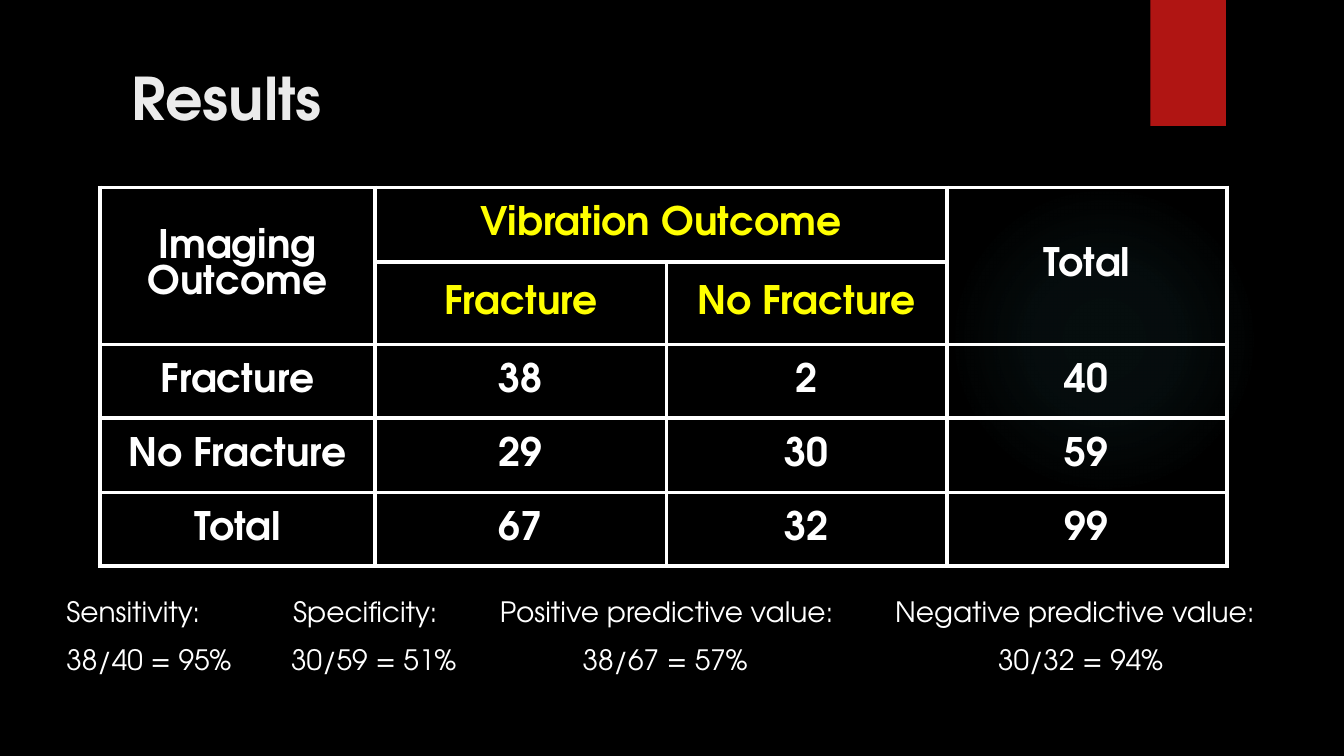
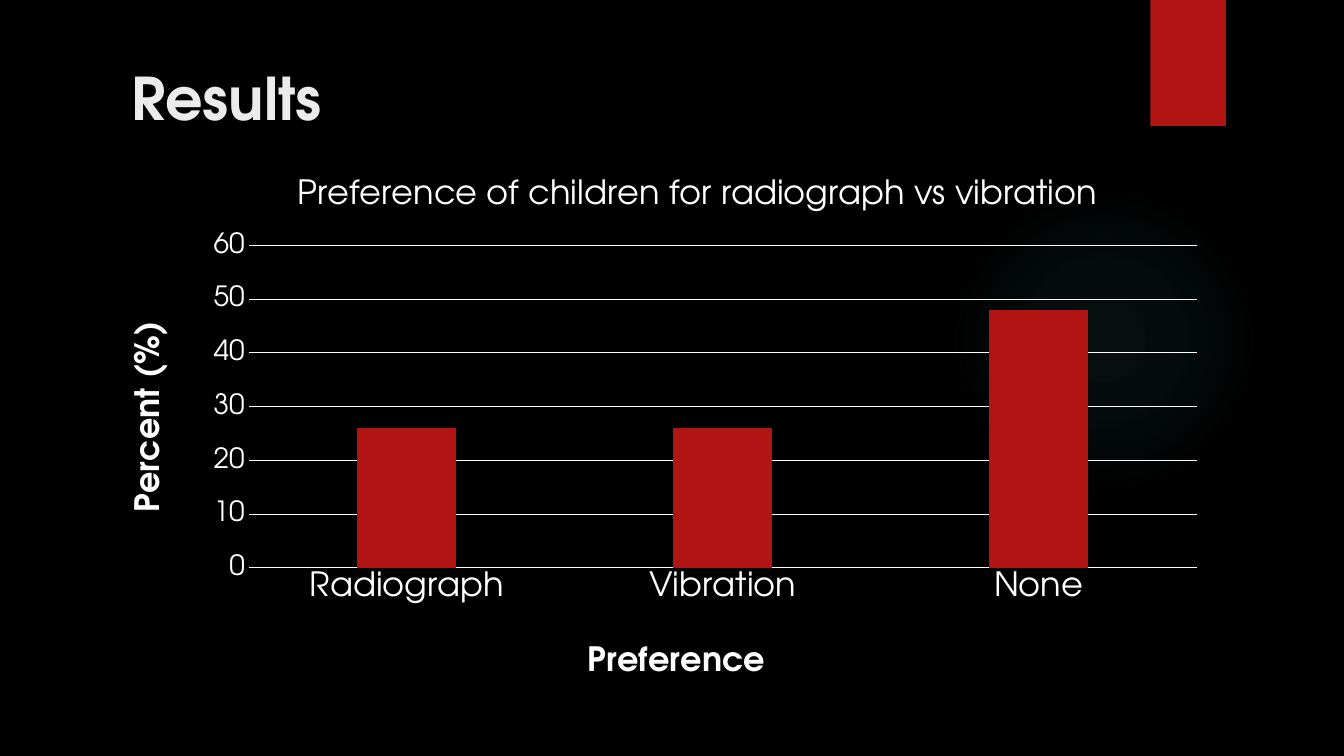
import pptx
import pptx.util
import pptx.dml.color
import pptx.chart.data
import pptx.enum.chart
import pptx.enum.shapes
import pptx.enum.text
import pptx.oxml
import pptx.oxml.ns
from lxml import etree

Inches = pptx.util.Inches
Pt = pptx.util.Pt
qn = pptx.oxml.ns.qn
ALIGN = pptx.enum.text.PP_ALIGN
ANCHOR = pptx.enum.text.MSO_ANCHOR
SHAPE = pptx.enum.shapes.MSO_SHAPE

FACE = "TeX Gyre Adventor"
BLACK, WHITE, PALE = "000000", "FFFFFF", "EBEBEB"
RED, YELLOW, TEAL = "B01513", "FFFF00", "50B9C1"


def color(text):
    return pptx.dml.color.RGBColor.from_string(text)


def style(font, size, tint=WHITE, bold=False):
    font.name, font.size, font.bold = FACE, Pt(size), bold
    font.color.rgb = color(tint)


def write(para, text, size, tint=WHITE, bold=False):
    run = para.add_run()
    run.text = text
    style(run.font, size, tint, bold)


def place(shape, box):
    shape.left, shape.top, shape.width, shape.height = map(Inches, box)


def add(parent, tag, **attrs):
    return etree.SubElement(parent, qn(tag), attrs)


def glow(shape):
    """Fill the shape with a faint light that fades outward."""
    shape.fill.background()
    old = shape._element.spPr.find(qn("a:noFill"))
    grad = etree.Element(qn("a:gradFill"))
    stops = add(grad, "a:gsLst")
    for pos, alpha in ((0, 7), (36, 6), (69, 0)):
        stop = add(stops, "a:gs", pos=str(pos * 1000))
        tint = add(stop, "a:srgbClr", val=TEAL)
        add(tint, "a:alpha", val=str(alpha * 1000))
    mode = add(grad, "a:path", path="circle")
    add(mode, "a:fillToRect", l="50000", t="50000", r="50000", b="50000")
    old.getparent().replace(old, grad)


def master(deck, slide):
    """Give the slide master its background, glow and red band."""
    base = deck.slide_master
    base.background.fill.solid()
    base.background.fill.fore_color.rgb = color(BLACK)
    light = slide.shapes.add_shape(SHAPE.OVAL, *map(Inches, (9.41, 1.83, 3.08, 3.08)))
    glow(light)
    band = slide.shapes.add_shape(SHAPE.RECTANGLE, *map(Inches, (11.41, 0, 0.75, 1.25)))
    band.fill.solid()
    band.fill.fore_color.rgb = color(RED)
    for i, shape in enumerate((light, band)):
        shape.shadow.inherit = False
        shape.line.fill.background()
        shape._element.nvSpPr.cNvPr.set("id", str(20 + i))
        base.shapes._spTree.insert(2 + i, shape._element)


def head(slide, text):
    title = slide.shapes.title
    place(title, (1.2, 0.56, 10.1, 1.53))
    frame = title.text_frame
    frame.auto_size = pptx.enum.text.MSO_AUTO_SIZE.NONE
    frame.vertical_anchor = ANCHOR.TOP
    para = frame.paragraphs[0]
    para.alignment = ALIGN.LEFT
    write(para, text, 42, PALE, True)


def border(cell, width):
    props = cell._tc.get_or_add_tcPr()
    for side in "LRTB":
        line = add(props, "a:ln" + side, w=str(Pt(width)))
        add(add(line, "a:solidFill"), "a:srgbClr", val=WHITE)


def grid(slide, left, top):
    rows = (
        ("Imaging Outcome", "Vibration Outcome", None, "Total"),
        (None, "Fracture", "No Fracture", None),
        ("Fracture", "38", "2", "40"),
        ("No Fracture", "29", "30", "59"),
        ("Total", "67", "32", "99"),
    )
    wide, tall = (2.73, 2.89, 2.78, 2.78), (0.74, 0.81, 0.73, 0.74, 0.73)
    box = map(Inches, (left, top, sum(wide), sum(tall)))
    table = slide.shapes.add_table(len(rows), len(wide), *box).table
    table.first_row = table.horz_banding = False
    for col, size in zip(table.columns, wide):
        col.width = Inches(size)
    for row, size in zip(table.rows, tall):
        row.height = Inches(size)
    for start, end in (((0, 0), (1, 0)), ((0, 1), (0, 2)), ((0, 3), (1, 3))):
        table.cell(*start).merge(table.cell(*end))
    for r, row in enumerate(rows):
        for c, text in enumerate(row):
            cell = table.cell(r, c)
            border(cell, 3)
            cell.fill.background()
            if text is None:
                continue
            cell.vertical_anchor = ANCHOR.MIDDLE
            para = cell.text_frame.paragraphs[0]
            para.alignment = ALIGN.CENTER
            tint = YELLOW if r < 2 and c in (1, 2) else WHITE
            write(para, text, 28, tint, True)


def rates(slide, box):
    """Set the four test measures and their values in tabbed lines."""
    lines = (
        (("Sensitivity:", "Specificity:", "Positive predictive value:",
          "Negative predictive value:"), (2.25, 4.3, 8.22)),
        (("38/40 = 95%", "30/59 = 51%", "38/67 = 57%", "30/32 = 94%"),
         (2.23, 5.12, 9.24)),
    )
    frame = slide.shapes.add_textbox(*map(Inches, box)).text_frame
    frame.word_wrap = True
    for i, (words, stops) in enumerate(lines):
        para = frame.add_paragraph() if i else frame.paragraphs[0]
        tabs = add(para._p.get_or_add_pPr(), "a:tabLst")
        for stop in stops:
            add(tabs, "a:tab", pos=str(Inches(stop)), algn="l")
        para.space_before = Pt(10 if i else 0)
        write(para, "\t".join(words), 20)


def pin(node, index, box, inner=False, **spots):
    """Fix a chart part at lengths measured inside the chart's box."""
    old = node.find(qn("c:layout"))
    if old is not None:
        node.remove(old)
    outer = etree.Element(qn("c:layout"))
    node.insert(index, outer)
    spot = add(outer, "c:manualLayout")
    if inner:
        add(spot, "c:layoutTarget", val="inner")
    for key in ("x", "y"):
        add(spot, f"c:{key}Mode", val="edge")
    for key, val in spots.items():
        whole = box[2] if key in "xw" else box[3]
        add(spot, "c:" + key, val=str(val / whole))


def label(title, text, box, x, y, bold=True, turn=False):
    frame = title.text_frame
    write(frame.paragraphs[0], text, 24, WHITE, bold)
    if turn:
        frame._txBody.bodyPr.set("rot", "-5400000")
    pin(title._element, 1, box, x=x, y=y)


def rule(line):
    line.color.rgb = color(WHITE)
    line.width = Pt(0.75)


def bars(slide, box):
    data = pptx.chart.data.CategoryChartData()
    data.categories = ("Radiograph", "Vibration", "None")
    data.add_series("Series 1", (26, 26, 48))
    kind = pptx.enum.chart.XL_CHART_TYPE.COLUMN_CLUSTERED
    chart = slide.shapes.add_chart(kind, *map(Inches, box), data).chart
    style(chart.font, 20)
    chart.has_legend = False
    chart.has_title = True
    label(chart.chart_title, "Preference of children for radiograph vs vibration",
          box, 1.68, 0.15, bold=False)
    plot = chart.plots[0]
    plot.gap_width, plot.overlap = 219, -27
    plot.vary_by_categories = False
    fill = plot.series[0].format.fill
    fill.solid()
    fill.fore_color.rgb = color(RED)
    cat, val = chart.category_axis, chart.value_axis
    for axis, size in ((cat, 24), (val, 20)):
        axis.major_tick_mark = axis.minor_tick_mark = pptx.enum.chart.XL_TICK_MARK.NONE
        style(axis.tick_labels.font, size)
    rule(cat.format.line)
    val.format.line.fill.background()
    val.minimum_scale, val.maximum_scale, val.major_unit = 0, 60, 10
    val.has_major_gridlines = True
    rule(val.major_gridlines.format.line)
    label(cat.axis_title, "Preference", box, 4.56, 4.81)
    label(val.axis_title, "Percent (%)", box, 0.02, 1.62, turn=True)
    area = chart._chartSpace.chart.plotArea
    pin(area, 0, box, True, x=1.26, y=0.91, w=9.4, h=3.22)


def main():
    deck = pptx.Presentation()
    deck.slide_width, deck.slide_height = Inches(13.33), Inches(7.5)
    first, second = (deck.slides.add_slide(deck.slide_layouts[5]) for _ in range(2))
    master(deck, first)
    for slide in (first, second):
        head(slide, "Results")
    grid(first, 0.99, 1.86)
    rates(first, (0.56, 5.85, 12.05, 0.98))
    bars(second, (1.21, 1.53, 10.89, 5.29))
    deck.save("out.pptx")


if __name__ == "__main__":
    main()
